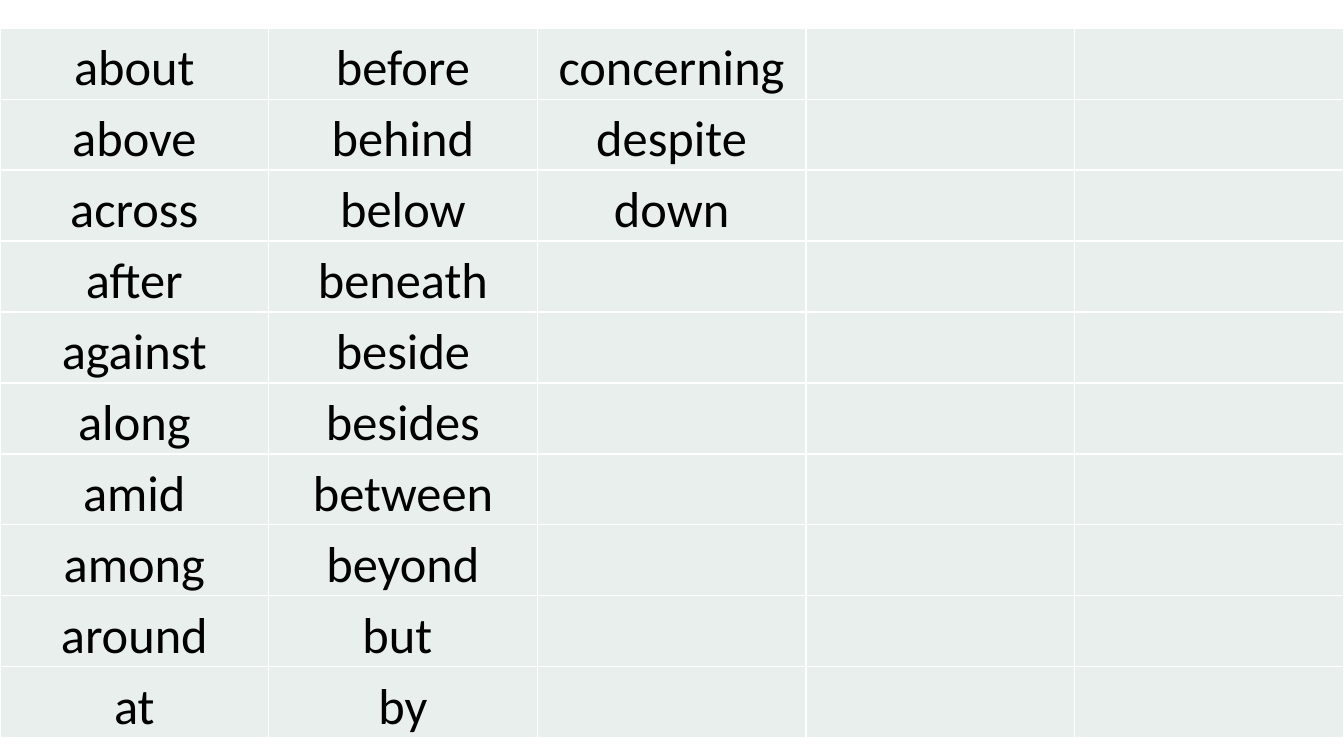
import pptx
import pptx.dml.color
import pptx.enum.text
import pptx.oxml
import pptx.oxml.ns
import pptx.util
from pptx.util import Cm

PREPOSITIONS = [
    ["about", "above", "across", "after", "against",
     "along", "amid", "among", "around", "at"],
    ["before", "behind", "below", "beneath", "beside",
     "besides", "between", "beyond", "but ", "by"],
    ["concerning", "despite", "down"],
    [],
    [],
]
ROWS = 10
COLUMN_WIDTH, ROW_HEIGHT = Cm(6.77), Cm(1.77)
CELL_FILL, GRID, INK = "E8EFEC", "FFFFFF", "000000"


def rgb(color):
    return pptx.dml.color.RGBColor.from_string(color)


def write(cell, text, *, size, font, color, line_spacing):
    paragraph = cell.text_frame.paragraphs[0]
    paragraph.alignment = pptx.enum.text.PP_ALIGN.CENTER
    paragraph.line_spacing = line_spacing
    run = paragraph.add_run()
    run.text = text
    run.font.size = pptx.util.Pt(size)
    run.font.name = font
    run.font.color.rgb = rgb(color)


presentation = pptx.Presentation()
presentation.slide_width = Cm(33.87)
presentation.slide_height = Cm(19.05)
slide = presentation.slides.add_slide(presentation.slide_layouts[6])

word_list = slide.shapes.add_table(
    ROWS, len(PREPOSITIONS), Cm(0), Cm(0.71),
    COLUMN_WIDTH * len(PREPOSITIONS), ROW_HEIGHT * ROWS).table
word_list.first_row = False
word_list.horz_banding = False
for column in word_list.columns:
    column.width = COLUMN_WIDTH
for row in word_list.rows:
    row.height = ROW_HEIGHT

for cell in word_list.iter_cells():
    cell.margin_left = cell.margin_right = Cm(0.18)
    cell.margin_top = cell.margin_bottom = 0
    cell.fill.solid()
    cell.fill.fore_color.rgb = rgb(CELL_FILL)
    properties = cell.fill._xPr
    for position, side in enumerate(("lnL", "lnR", "lnT", "lnB")):
        properties.insert(position, pptx.oxml.parse_xml(
            f'<a:{side} {pptx.oxml.ns.nsdecls("a")} w="12700"><a:solidFill>'
            f'<a:srgbClr val="{GRID}"/></a:solidFill></a:{side}>'))

for column_index, words in enumerate(PREPOSITIONS):
    for row_index, word in enumerate(words):
        write(word_list.cell(row_index, column_index), word,
              size=36, font="Calibri", color=INK, line_spacing=1.15)

presentation.save("out.pptx")
